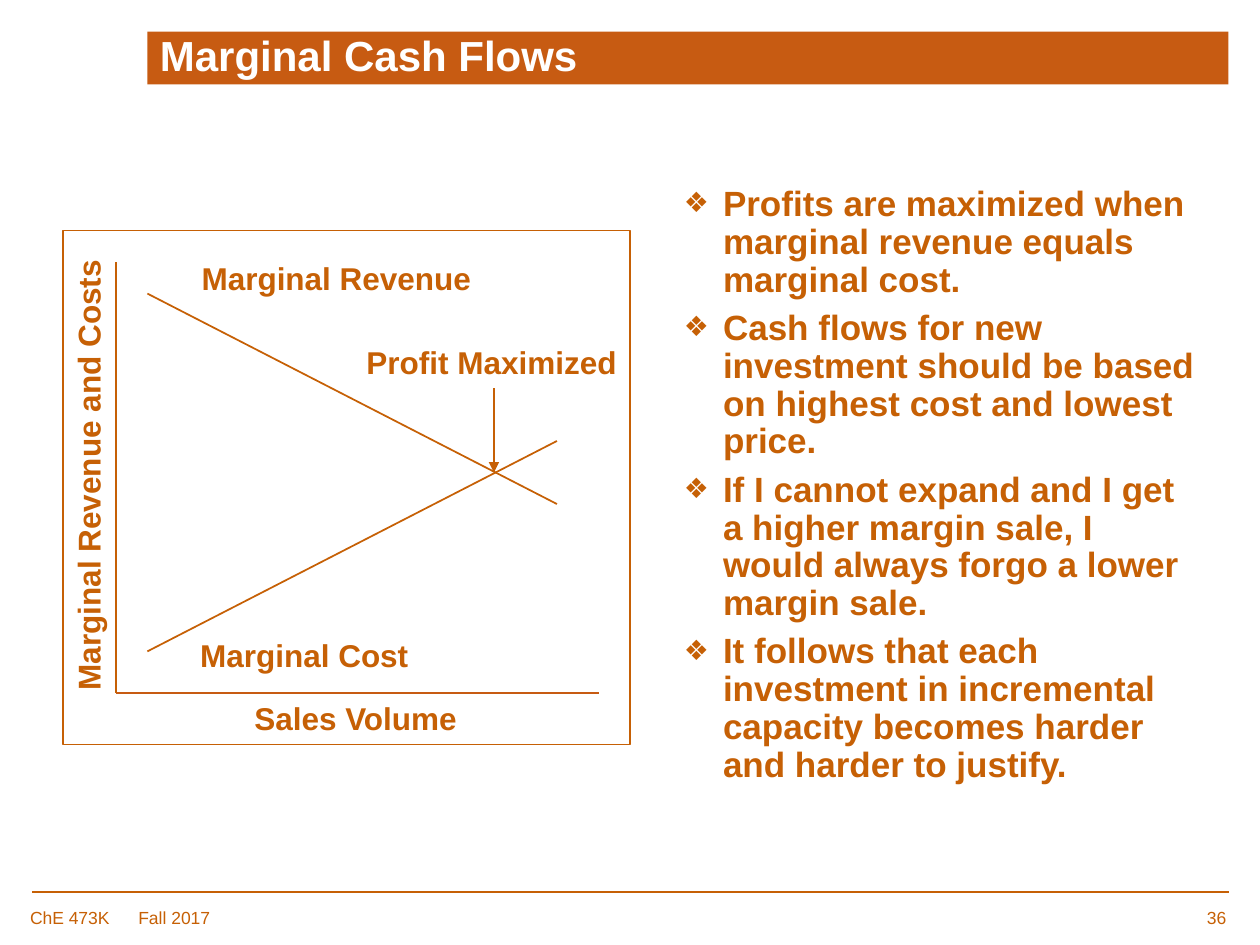
"""Build the Marginal Cash Flows slide."""
from lxml import etree
from pptx import Presentation
from pptx.dml.color import RGBColor
from pptx.enum.shapes import MSO_CONNECTOR, MSO_SHAPE
from pptx.enum.text import MSO_ANCHOR, PP_ALIGN
from pptx.oxml.ns import qn
from pptx.util import Inches, Pt

RECTANGLE = MSO_SHAPE.RECTANGLE
STRAIGHT = MSO_CONNECTOR.STRAIGHT
TOP, MIDDLE = MSO_ANCHOR.TOP, MSO_ANCHOR.MIDDLE
LEFT, CENTER = PP_ALIGN.LEFT, PP_ALIGN.CENTER

ORANGE = RGBColor(0xC6, 0x60, 0x05)
BURNT_ORANGE = RGBColor(0xC7, 0x5B, 0x12)
WHITE = RGBColor(0xFF, 0xFF, 0xFF)

TITLE = "Marginal Cash Flows"
BULLETS = [
    "Profits are maximized when marginal revenue equals marginal cost.",
    "Cash flows for new investment should be based on highest cost and lowest price.",
    "If I cannot expand and I get a higher margin sale, I would always forgo a lower margin sale.",
    "It follows that each investment in incremental capacity becomes harder and harder to justify.",
]
FOOTER = "ChE 473K\tFall 2017"
PAGE_NUMBER = "36"

CHART_LABELS = [
    ("Sales Volume", (1.92, 5.5, 1.83, 0.4), LEFT, 0),
    ("Marginal Revenue and Costs", (-1.11, 3.57, 3.62, 0.4), LEFT, 270),
    ("Marginal Revenue", (1.49, 2.01, 2.36, 0.4), CENTER, 0),
    ("Marginal Cost", (1.49, 5, 1.85, 0.4), LEFT, 0),
    ("Profit Maximized", (2.81, 2.67, 2.19, 0.4), LEFT, 0),
]

ORIGIN = (0.92, 5.5)
FOOTER_RULE = ((9.75, 7.08), (0.25, 7.08))
VERTICAL_AXIS = ((0.92, 2.08), ORIGIN)
HORIZONTAL_AXIS = (ORIGIN, (4.75, 5.5))
REVENUE_LINE = ((1.17, 2.33), (4.42, 4))
COST_LINE = ((1.17, 5.17), (4.42, 3.5))
PROFIT_ARROW = ((3.92, 3.08), (3.92, 3.75))


def add_rectangle(slide, box, fill, line=None):
    shape = slide.shapes.add_shape(RECTANGLE, *map(Inches, box))
    shape.shadow.inherit = False
    shape.fill.solid()
    shape.fill.fore_color.rgb = fill
    if line is None:
        shape.line.fill.background()
    else:
        shape.line.color.rgb = line
        shape.line.width = Pt(1)
    return shape


def add_line(slide, ends, color=ORANGE, arrow=False):
    start, end = ends
    line = slide.shapes.add_connector(STRAIGHT, *map(Inches, start + end))
    line.line.color.rgb = color
    line.line.width = Pt(1)
    properties = line._element.spPr
    if arrow:
        etree.SubElement(properties.find(qn("a:ln")), qn("a:tailEnd"), type="triangle")
    etree.SubElement(properties, qn("a:effectLst"))


def add_bullet(paragraph):
    properties = paragraph._p.get_or_add_pPr()
    properties.set("marL", str(Inches(0.31)))
    properties.set("indent", str(-Inches(0.31)))
    etree.SubElement(properties, qn("a:buSzPct"), val="80000")
    etree.SubElement(properties, qn("a:buFont"), typeface="Arial")
    etree.SubElement(properties, qn("a:buChar"), char="❖")


def add_tab_stop(paragraph, position):
    tabs = etree.SubElement(paragraph._p.get_or_add_pPr(), qn("a:tabLst"))
    etree.SubElement(tabs, qn("a:tab"), pos=str(Inches(position)), algn="l")


def write_text(shape, *texts, size=18, color=ORANGE, bold=True, align=LEFT, anchor=TOP,
               wrap=False, spacing=None, gap=0, bullet=False, tab=None):
    frame = shape.text_frame
    frame.word_wrap = wrap
    frame.vertical_anchor = anchor
    for index, text in enumerate(texts):
        paragraph = frame.add_paragraph() if index else frame.paragraphs[0]
        paragraph.alignment = align
        if spacing:
            paragraph.line_spacing = spacing
        if index:
            paragraph.space_before = Pt(gap)
        if bullet:
            add_bullet(paragraph)
        if tab:
            add_tab_stop(paragraph, tab)
        run = paragraph.add_run()
        run.text = text
        run.font.name = "Arial"
        run.font.size = Pt(size)
        run.font.bold = bold
        run.font.color.rgb = color


def add_text(slide, box, *texts, rotation=0, **text_format):
    shape = slide.shapes.add_textbox(*map(Inches, box))
    shape.rotation = rotation
    write_text(shape, *texts, **text_format)


def main():
    presentation = Presentation()
    presentation.slide_width = Inches(10)
    presentation.slide_height = Inches(7.5)
    slide = presentation.slides.add_slide(presentation.slide_layouts[6])

    add_text(slide, (9.48, 7.15, 0.37, 0.26), PAGE_NUMBER, size=10, bold=False)
    add_line(slide, FOOTER_RULE)
    add_text(slide, (0.14, 7.15, 1.64, 0.27), FOOTER, size=10, bold=False, wrap=True, tab=0.86)

    title = add_rectangle(slide, (1.17, 0.25, 8.58, 0.42), BURNT_ORANGE)
    write_text(title, TITLE, size=24, color=WHITE, anchor=MIDDLE, wrap=True, spacing=0.9)
    add_text(slide, (5.33, 1.43, 4.25, 4.9), *BULLETS, size=20, wrap=True,
             spacing=0.9, gap=6, bullet=True)

    add_rectangle(slide, (0.5, 1.83, 4.5, 4.08), WHITE, ORANGE)
    add_line(slide, HORIZONTAL_AXIS, color=BURNT_ORANGE)
    for ends in (VERTICAL_AXIS, REVENUE_LINE, COST_LINE):
        add_line(slide, ends)
    for text, box, align, rotation in CHART_LABELS:
        add_text(slide, box, text, align=align, rotation=rotation)
    add_line(slide, PROFIT_ARROW, arrow=True)

    presentation.save("out.pptx")


if __name__ == "__main__":
    main()
